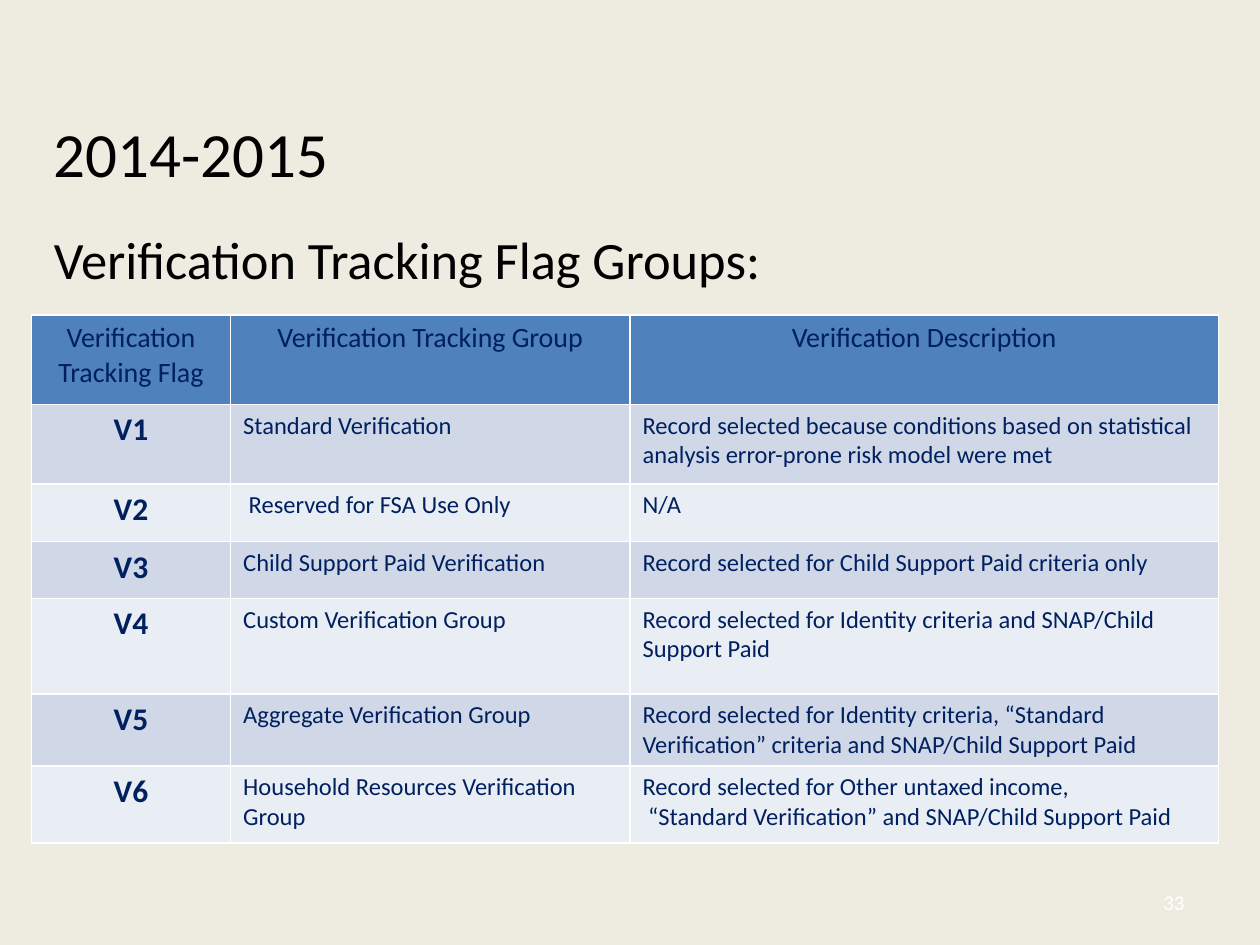
from pptx import Presentation
from pptx.dml.color import RGBColor
from pptx.enum.text import MSO_ANCHOR as Anchor, PP_ALIGN as Align
from pptx.util import Inches, Pt

NAVY = "002060"
HEADER_FILL = "4F81BD"
BAND_FILLS = ("D0D8E8", "E9EDF4")
COLUMN_WIDTHS = (1.58, 3.17, 4.67)
ROW_HEIGHTS = (0.71, 0.63, 0.46, 0.45, 0.76, 0.57, 0.61)
HEADINGS = ("Verification Tracking Flag", "Verification Tracking Group",
            "Verification Description")
FLAG_GROUPS = (
    ("V1", "Standard Verification",
     "Record selected because conditions based on statistical analysis "
     "error-prone risk model were met"),
    ("V2", " Reserved for FSA Use Only", "N/A"),
    ("V3", "Child Support Paid Verification",
     "Record selected for Child Support Paid criteria only"),
    ("V4", "Custom Verification Group",
     "Record selected for Identity criteria and SNAP/Child Support Paid"),
    ("V5", "Aggregate Verification Group",
     "Record selected for Identity criteria, “Standard Verification” "
     "criteria and SNAP/Child Support Paid"),
    ("V6", "Household Resources Verification Group",
     "Record selected for Other untaxed income,\n"
     " “Standard Verification” and SNAP/Child Support Paid"),
)


def rgb(color):
    return RGBColor.from_string(color)


def write(frame, text, size, color=NAVY, bold=False, align=Align.LEFT):
    frame.word_wrap = True
    frame.text = text
    for paragraph in frame.paragraphs:
        paragraph.alignment = align
        font = paragraph.font
        font.name = "Calibri"
        font.size = Pt(size)
        font.bold = bold
        font.color.rgb = rgb(color)


def add_text(slide, left, top, width, height, text, size,
             anchor=Anchor.TOP, **style):
    frame = slide.shapes.add_textbox(
        Inches(left), Inches(top), Inches(width), Inches(height)).text_frame
    frame.vertical_anchor = anchor
    write(frame, text, size, **style)


def fill_cell(cell, text, fill, size, **style):
    cell.fill.solid()
    cell.fill.fore_color.rgb = rgb(fill)
    write(cell.text_frame, text, size, **style)


def add_flag_table(slide, left, top):
    table = slide.shapes.add_table(
        len(ROW_HEIGHTS), len(COLUMN_WIDTHS), Inches(left), Inches(top),
        Inches(sum(COLUMN_WIDTHS)), Inches(sum(ROW_HEIGHTS))).table
    for column, width in zip(table.columns, COLUMN_WIDTHS):
        column.width = Inches(width)
    for row, height in zip(table.rows, ROW_HEIGHTS):
        row.height = Inches(height)

    for column, heading in enumerate(HEADINGS):
        fill_cell(table.cell(0, column), heading, HEADER_FILL, 16,
                  align=Align.CENTER)
    for row, (flag, group, description) in enumerate(FLAG_GROUPS, start=1):
        band = BAND_FILLS[(row - 1) % 2]
        fill_cell(table.cell(row, 0), flag, band, 18, bold=True,
                  align=Align.CENTER)
        fill_cell(table.cell(row, 1), group, band, 14)
        fill_cell(table.cell(row, 2), description, band, 14)


def main():
    deck = Presentation()
    deck.slide_width, deck.slide_height = Inches(10), Inches(7.5)
    slide = deck.slides.add_slide(deck.slide_layouts[6])
    slide.background.fill.solid()
    slide.background.fill.fore_color.rgb = rgb("EEECE1")

    add_text(slide, 0.33, 0.83, 9.25, 0.75, "2014-2015", 36,
             anchor=Anchor.MIDDLE, color="000000")
    add_text(slide, 0.33, 1.75, 9, 0.7, "Verification Tracking Flag Groups:",
             30, color="000000")
    add_flag_table(slide, 0.25, 2.5)
    add_text(slide, 8.5, 6.96, 1, 0.4, "33", 12, anchor=Anchor.MIDDLE,
             color="FFFFFF", align=Align.RIGHT)
    deck.save("out.pptx")


if __name__ == "__main__":
    main()
